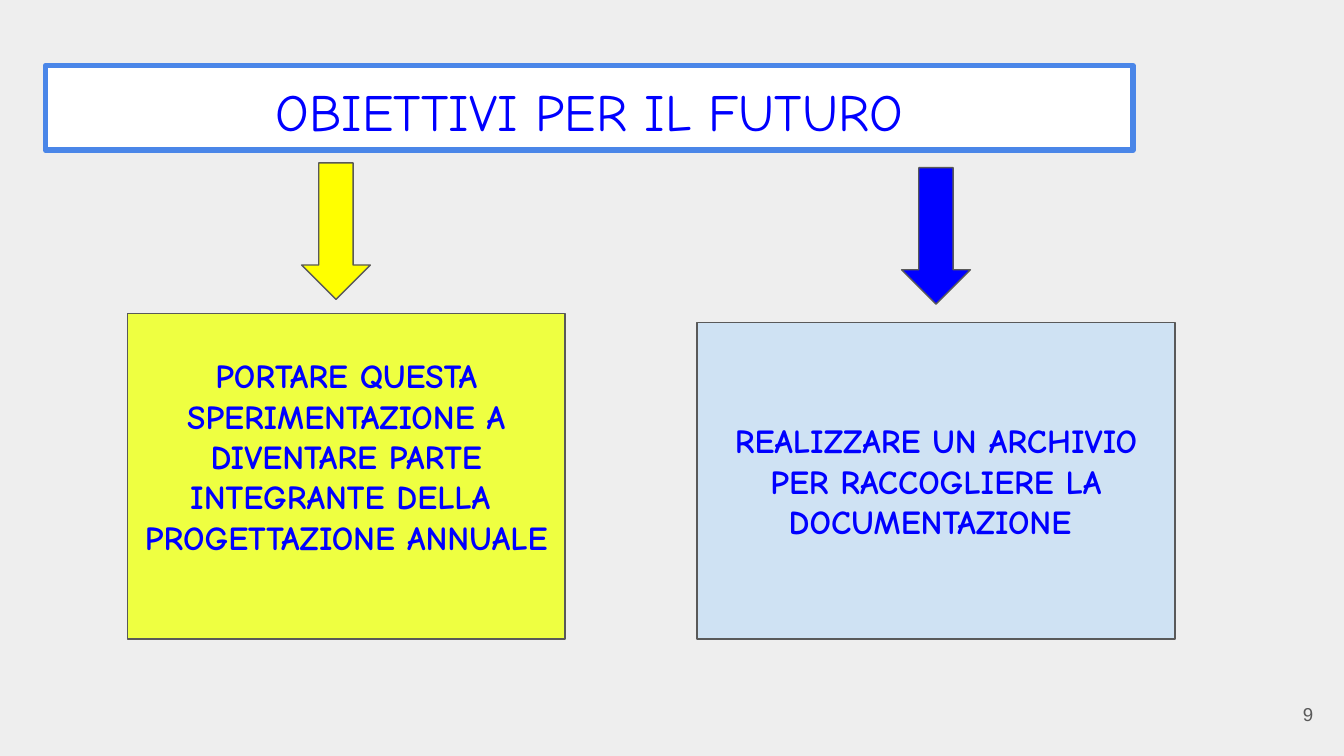
from pptx import Presentation
from pptx.dml.color import RGBColor
from pptx.enum.shapes import MSO_SHAPE
from pptx.enum.text import MSO_ANCHOR, MSO_AUTO_SIZE, PP_ALIGN
from pptx.util import Cm, Pt

BACKGROUND = RGBColor(0xEE, 0xEE, 0xEE)
WHITE = RGBColor(0xFF, 0xFF, 0xFF)
BLUE = RGBColor(0x00, 0x00, 0xFF)
TITLE_BORDER = RGBColor(0x4A, 0x86, 0xE8)
GREY = RGBColor(0x59, 0x59, 0x59)
YELLOW = RGBColor(0xFF, 0xFF, 0x00)
LIME = RGBColor(0xEE, 0xFF, 0x41)
PALE_BLUE = RGBColor(0xCF, 0xE2, 0xF3)

HEADING_FONT = "Comic Neue"
INSET = Cm(0.25)


def paint(shape, fill, line, width):
    shape.fill.solid()
    shape.fill.fore_color.rgb = fill
    shape.line.color.rgb = line
    shape.line.width = Pt(width)


def write(shape, text, size, color, font=HEADING_FONT, bold=False,
          align=PP_ALIGN.CENTER, anchor=MSO_ANCHOR.MIDDLE, bottom=INSET):
    """Fill the shape with text, one paragraph for each line of it."""
    frame = shape.text_frame
    frame.text = text
    frame.word_wrap = True
    frame.auto_size = MSO_AUTO_SIZE.NONE
    frame.vertical_anchor = anchor
    frame.margin_left = frame.margin_right = frame.margin_top = INSET
    frame.margin_bottom = bottom
    for paragraph in frame.paragraphs:
        paragraph.alignment = align
        for span in paragraph.runs:
            span.font.name = font
            span.font.size = Pt(size)
            span.font.bold = bold
            span.font.color.rgb = color


def add_title(page, text):
    title = page.shapes.title
    title.left, title.top = Cm(0.86), Cm(1.24)
    title.width, title.height = Cm(20.55), Cm(1.6)
    paint(title, WHITE, TITLE_BORDER, 3)
    write(title, text, 28, BLUE, anchor=MSO_ANCHOR.TOP)


def add_outlined_shape(page, kind, left, top, width, height, fill):
    shape = page.shapes.add_shape(kind, Cm(left), Cm(top), Cm(width), Cm(height))
    shape.shadow.inherit = False
    paint(shape, fill, GREY, 0.75)
    return shape


def add_goal(page, left, top, width, height, fill, text, bottom=INSET):
    box = add_outlined_shape(page, MSO_SHAPE.RECTANGLE, left, top, width, height, fill)
    write(box, text, 18, BLUE, bold=True, bottom=bottom)


def add_down_arrow(page, left, top, fill):
    add_outlined_shape(page, MSO_SHAPE.DOWN_ARROW, left, top, 1.3, 2.58, fill)


def add_page_number(page, number):
    box = page.shapes.add_textbox(Cm(23.55), Cm(12.95), Cm(1.52), Cm(1.09))
    write(box, number, 10, GREY, font="Arial", align=PP_ALIGN.RIGHT)


def main():
    deck = Presentation()
    deck.slide_width, deck.slide_height = Cm(25.4), Cm(14.29)
    page = deck.slides.add_slide(deck.slide_layouts[5])
    page.background.fill.solid()
    page.background.fill.fore_color.rgb = BACKGROUND

    add_title(page, "OBIETTIVI PER IL FUTURO")
    add_page_number(page, "9")
    add_goal(page, 2.41, 5.93, 8.27, 6.15, LIME,
             "PORTARE QUESTA SPERIMENTAZIONE A\n"
             "DIVENTARE PARTE INTEGRANTE DELLA \n"
             "PROGETTAZIONE ANNUALE", bottom=Cm(1.02))
    add_goal(page, 13.17, 6.1, 9.04, 5.98, PALE_BLUE,
             "REALIZZARE UN ARCHIVIO PER RACCOGLIERE LA DOCUMENTAZIONE ")
    add_down_arrow(page, 5.7, 3.08, YELLOW)
    add_down_arrow(page, 17.04, 3.17, BLUE)

    deck.save("out.pptx")


if __name__ == "__main__":
    main()
